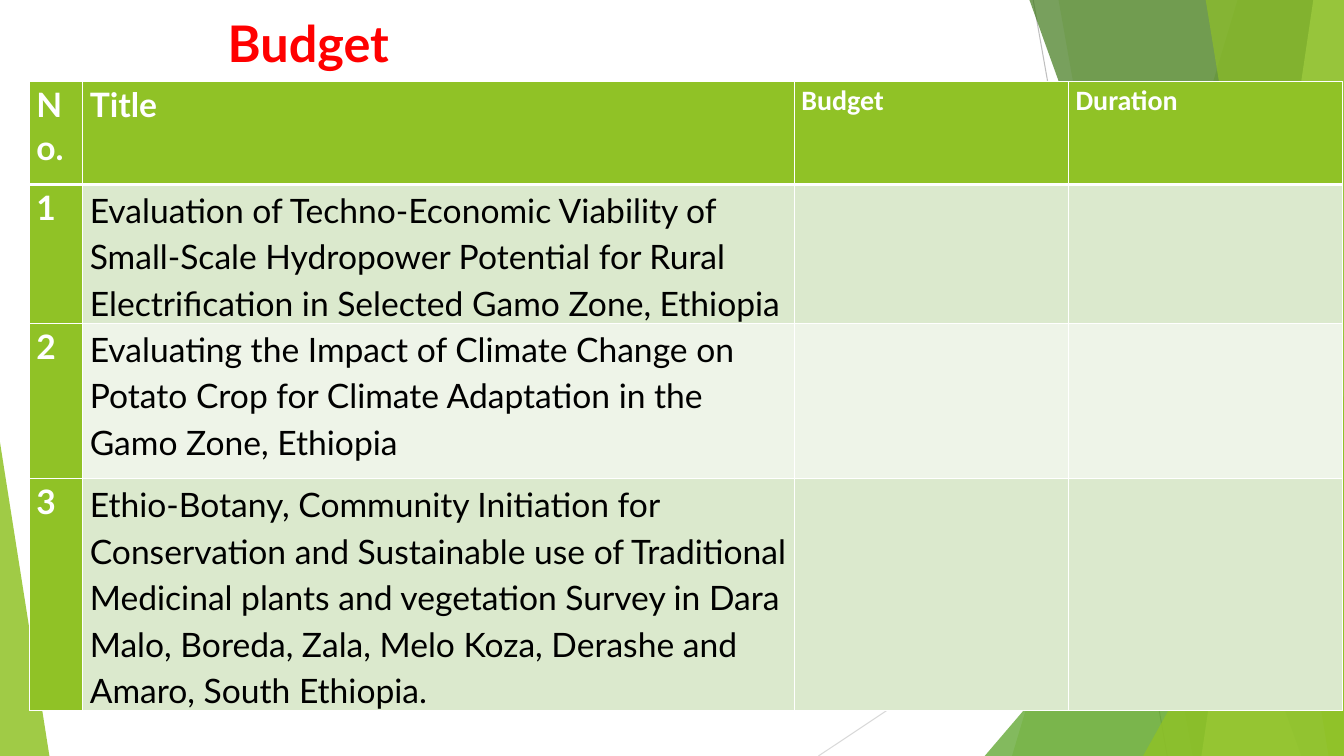
from lxml import etree
from pptx import Presentation
from pptx.dml.color import RGBColor
from pptx.enum.shapes import MSO_CONNECTOR, MSO_SHAPE
from pptx.oxml.ns import qn
from pptx.util import Pt

STRAIGHT = MSO_CONNECTOR.STRAIGHT
TRIANGLE = MSO_SHAPE.ISOSCELES_TRIANGLE

WHITE = RGBColor(0xFF, 0xFF, 0xFF)
BLACK = RGBColor(0, 0, 0)
RED = RGBColor(0xFF, 0, 0)
GREEN = RGBColor(0x90, 0xC2, 0x26)
MID_GREEN = RGBColor(0x54, 0xA0, 0x21)
DARK_GREEN = RGBColor(0x3F, 0x78, 0x19)
LIGHT_GREEN = RGBColor(0xC0, 0xE4, 0x74)
BAND_DARK = RGBColor(0xDB, 0xE9, 0xCD)
BAND_LIGHT = RGBColor(0xEE, 0xF4, 0xE8)
GREY = RGBColor(0xBF, 0xBF, 0xBF)
PALE_GREY = RGBColor(0xD9, 0xD9, 0xD9)

WIDTH, HEIGHT, TOP = 960, 540, -0.72
HEADERS = ["No.", "Title", "Budget", "Duration"]
PROJECTS = [
    "Evaluation of Techno-Economic Viability of Small-Scale Hydropower "
    "Potential for Rural Electrification in Selected Gamo Zone, Ethiopia",
    "Evaluating the Impact of Climate Change on Potato Crop for Climate "
    "Adaptation in the Gamo Zone, Ethiopia",
    "Ethio-Botany, Community Initiation for Conservation and Sustainable use "
    "of Traditional Medicinal plants and vegetation Survey in Dara Malo, "
    "Boreda, Zala, Melo Koza, Derashe and Amaro, South Ethiopia.",
]
COL_WIDTHS = [38.2, 508.3, 195.8, 195.8]
ROW_HEIGHTS = [73.4, 98.6, 111, 165.6]

TITLE = {"name": "Lato", "size": Pt(36), "bold": True}
LABEL = {"name": "Lato", "size": Pt(24), "bold": True}
SMALL_LABEL = {"name": "Calibri", "size": Pt(20), "bold": True}
BODY = {"name": "Lato", "size": Pt(24), "bold": False}


def add_line(slide, x1, y1, x2, y2, color):
    line = slide.shapes.add_connector(STRAIGHT, Pt(x1), Pt(y1), Pt(x2), Pt(y2))
    line.line.color.rgb = color
    line.line.width = Pt(0.75)
    etree.SubElement(line._element.spPr, qn("a:effectLst"))


def paint(sp, color, opacity):
    sp.shadow.inherit = False
    sp.line.fill.background()
    sp.fill.solid()
    sp.fill.fore_color.rgb = color
    clr = sp._element.spPr.find(qn("a:solidFill"))[0]
    etree.SubElement(clr, qn("a:alpha"), val=str(opacity * 1000))


def add_facet(slide, x_top, x_bottom, color, opacity):
    builder = slide.shapes.build_freeform(Pt(x_top), Pt(TOP))
    corners = [(WIDTH, TOP), (WIDTH, HEIGHT), (x_bottom, HEIGHT)]
    builder.add_line_segments([(Pt(x), Pt(y)) for x, y in corners], close=True)
    paint(builder.convert_to_shape(), color, opacity)


def add_triangle(slide, x, y, w, apex, color, opacity):
    sp = slide.shapes.add_shape(TRIANGLE, Pt(x), Pt(y), Pt(w), Pt(HEIGHT - y))
    sp.adjustments[0] = apex
    paint(sp, color, opacity)


def write(tf, text, style, color, spacing=1.0):
    p = tf.paragraphs[0]
    p.line_spacing = spacing
    r = p.add_run()
    r.text = text
    for key, value in style.items():
        setattr(r.font, key, value)
    r.font.color.rgb = color


def add_title(slide, text):
    tf = slide.shapes.add_textbox(Pt(155.5), Pt(5), Pt(702), Pt(64)).text_frame
    tf.word_wrap = True
    write(tf, text, TITLE, RED)


def add_border(cell, side, width):
    tc_pr = cell._tc.get_or_add_tcPr()
    ln = etree.SubElement(tc_pr, qn("a:ln" + side), w=str(Pt(width)))
    fill = etree.SubElement(ln, qn("a:solidFill"))
    etree.SubElement(fill, qn("a:srgbClr"), val=str(WHITE))


def format_cell(cell, fill, top, bottom):
    margins = {"margin_left": Pt(5), "margin_right": Pt(5), "margin_top": 0, "margin_bottom": 0}
    for key, value in margins.items():
        setattr(cell, key, value)
    for side, width in {"L": 1, "R": 1, "T": top, "B": bottom}.items():
        add_border(cell, side, width)
    cell.fill.solid()
    cell.fill.fore_color.rgb = fill


def add_budget_table(slide):
    rows, cols = len(ROW_HEIGHTS), len(COL_WIDTHS)
    table = slide.shapes.add_table(
        rows, cols, Pt(21), Pt(58.3), Pt(sum(COL_WIDTHS)), Pt(sum(ROW_HEIGHTS))).table
    for col, width in zip(table.columns, COL_WIDTHS):
        col.width = Pt(width)
    for row, height in zip(table.rows, ROW_HEIGHTS):
        row.height = Pt(height)
    for i in range(rows):
        band = BAND_DARK if i % 2 else BAND_LIGHT
        for j in range(cols):
            fill = GREEN if i == 0 or j == 0 else band
            format_cell(table.cell(i, j), fill, 3 if i == 1 else 1, 3 if i == 0 else 1)
    for j, header in enumerate(HEADERS):
        style = LABEL if j < 2 else SMALL_LABEL
        write(table.cell(0, j).text_frame, header, style, WHITE, 1.07)
    for i, project in enumerate(PROJECTS, 1):
        write(table.cell(i, 0).text_frame, str(i), LABEL, WHITE, 1.07)
        write(table.cell(i, 1).text_frame, project, BODY, BLACK, 1.15)


def add_backdrop(slide):
    add_line(slide, 738, 0, 833.8, HEIGHT, GREY)
    add_line(slide, WIDTH, 290.2, 584.6, HEIGHT, PALE_GREY)
    add_facet(slide, 884.2, 722.9, GREEN, 30)
    add_facet(slide, 756, 851.8, GREEN, 20)
    add_triangle(slide, 703.4, 239.8, 256.6, 1, MID_GREEN, 72)
    add_facet(slide, 735.1, 929.5, DARK_GREEN, 70)
    add_facet(slide, 938.2, 858.2, LIGHT_GREEN, 70)
    add_facet(slide, 861.1, 949, GREEN, 65)
    add_triangle(slide, 816.5, 283, 143.5, 1, GREEN, 80)
    add_triangle(slide, 0, 316, 35.3, 0, GREEN, 85)


def main():
    prs = Presentation()
    prs.slide_width, prs.slide_height = Pt(WIDTH), Pt(HEIGHT)
    slide = prs.slides.add_slide(prs.slide_layouts[6])
    add_backdrop(slide)
    add_title(slide, "Budget")
    add_budget_table(slide)
    prs.save("out.pptx")


if __name__ == "__main__":
    main()
